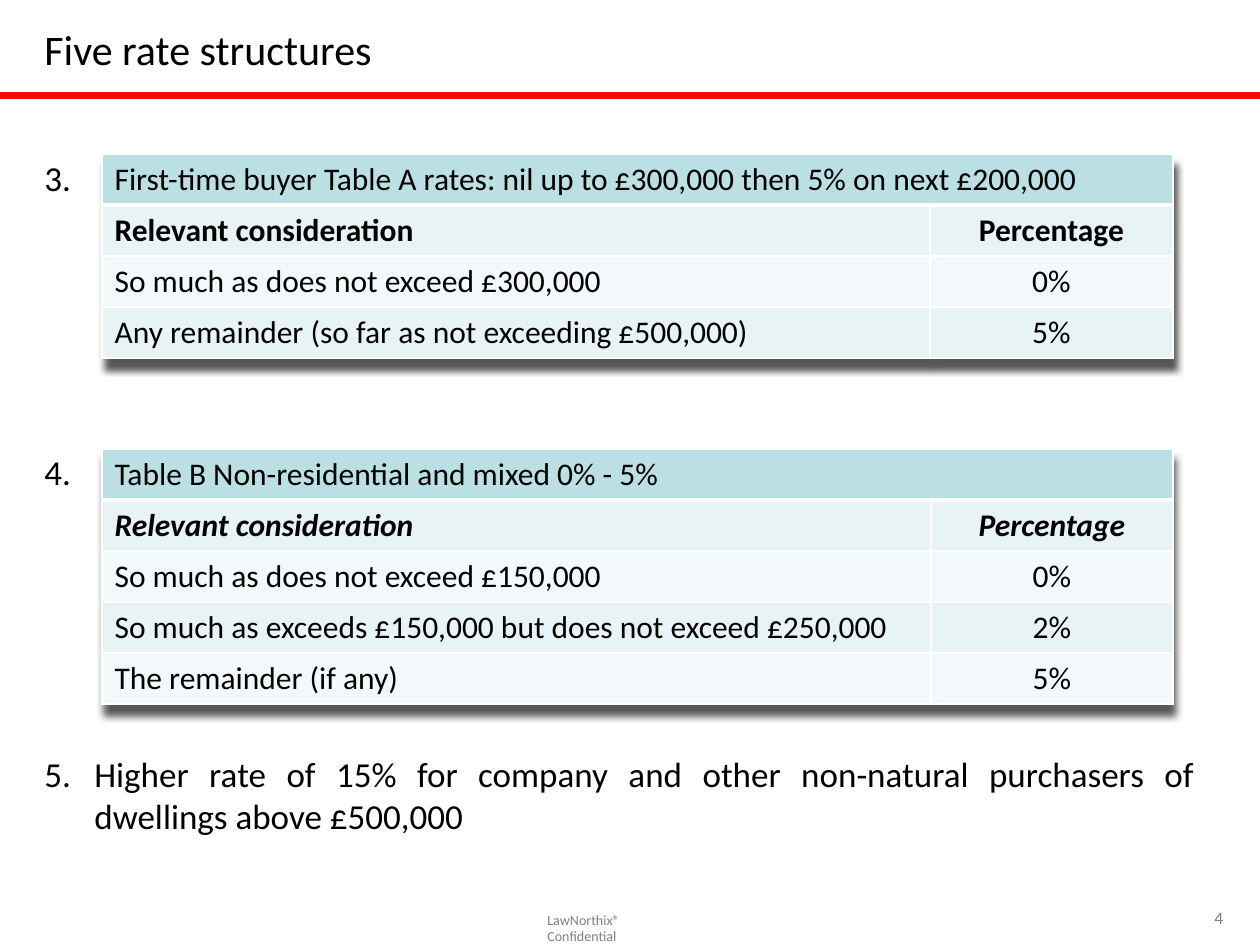
from lxml import etree
from pptx import Presentation
from pptx.dml.color import RGBColor
from pptx.enum.shapes import MSO_SHAPE
from pptx.enum.text import MSO_ANCHOR, PP_ALIGN
from pptx.oxml.ns import qn
from pptx.util import Emu, Pt

RECT = MSO_SHAPE.RECTANGLE
TOP, MIDDLE = MSO_ANCHOR.TOP, MSO_ANCHOR.MIDDLE
LEFT, CENTER, JUSTIFY = PP_ALIGN.LEFT, PP_ALIGN.CENTER, PP_ALIGN.JUSTIFY

FONT = "Calibri"
BLACK, GRAY, RED, WHITE = "000000", "7F7F7F", "FF0000", "FFFFFF"
HEADER_FILL = "BBE0E3"
BAND_FILLS = ("E7F3F4", "F3F9FA")
ROW_HEIGHT = 51
TABLE_LEFT = 102

FIRST_TIME_ROWS = [
    ("First-time buyer Table A rates: nil up to £300,000 then 5% on next £200,000", ""),
    ("Relevant consideration", "Percentage"),
    ("So much as does not exceed £300,000", "0%"),
    ("Any remainder (so far as not exceeding £500,000)", "5%"),
]
NON_RESIDENTIAL_ROWS = [
    ("Table B Non-residential and mixed 0% - 5%", ""),
    ("Relevant consideration", "Percentage"),
    ("So much as does not exceed £150,000", "0%"),
    ("So much as exceeds £150,000 but does not exceed £250,000", "2%"),
    ("The remainder (if any)", "5%"),
]
ITEMS = [
    ("3.", 0, LEFT),
    ("4.", 144, LEFT),
    ("5.\tHigher rate of 15% for company and other non-natural purchasers of "
     "dwellings above £500,000", 149, JUSTIFY),
]


def px(n):
    return Emu(round(n * 914400 / 126))


def rgb(color):
    return RGBColor.from_string(color)


def style_paragraph(p, size, color=BLACK, align=LEFT):
    p.font.name = FONT
    p.font.size = Pt(size)
    p.font.color.rgb = rgb(color)
    p.alignment = align


def add_text_frame(slide, x, y, w, h, anchor=TOP, wrap=True):
    tf = slide.shapes.add_textbox(px(x), px(y), px(w), px(h)).text_frame
    tf.word_wrap = wrap
    tf.vertical_anchor = anchor
    return tf


def add_label(slide, box, text, size, color=BLACK, anchor=TOP, wrap=False):
    tf = add_text_frame(slide, *box, anchor=anchor, wrap=wrap)
    p = tf.paragraphs[0]
    p.text = text
    style_paragraph(p, size, color)
    return p


def add_rule(slide, x, y, w, h):
    sp = slide.shapes.add_shape(RECT, px(x), px(y), px(w), px(h))
    sp.shadow.inherit = False
    sp.fill.solid()
    sp.fill.fore_color.rgb = rgb(RED)
    sp.line.fill.background()


def add_items(slide, x, y, w, h):
    tf = add_text_frame(slide, x, y, w, h)
    for i, (text, gap, align) in enumerate(ITEMS):
        p = tf.add_paragraph() if i else tf.paragraphs[0]
        p.text = text
        p.space_before = Pt(gap)
        style_paragraph(p, 20, align=align)
        pPr = p._p.get_or_add_pPr()
        pPr.set("marL", str(px(50)))
        pPr.set("indent", str(-px(50)))


def set_borders(cell, top, bottom):
    tcPr = cell._tc.get_or_add_tcPr()
    for side, width in (("L", 1), ("R", 1), ("T", top), ("B", bottom)):
        ln = etree.SubElement(tcPr, qn(f"a:ln{side}"), w=str(Pt(width)))
        fill = etree.SubElement(ln, qn("a:solidFill"))
        etree.SubElement(fill, qn("a:srgbClr"), val=WHITE)


def add_table_shadow(table):
    effects = etree.SubElement(table._tbl.tblPr, qn("a:effectLst"))
    table._tbl.tblPr.insert(0, effects)
    shadow = etree.SubElement(effects, qn("a:outerShdw"), blurRad="50800",
                              dist="76200", dir="4800000", algn="tl", rotWithShape="0")
    color = etree.SubElement(shadow, qn("a:srgbClr"), val=BLACK)
    etree.SubElement(color, qn("a:alpha"), val="65000")


def add_rate_table(slide, y, widths, rows, italic=False):
    frame = slide.shapes.add_table(len(rows), 2, px(TABLE_LEFT), px(y),
                                   px(sum(widths)), px(ROW_HEIGHT * len(rows)))
    table = frame.table
    table.first_row = table.horz_banding = False
    for column, width in zip(table.columns, widths):
        column.width = px(width)
    for i, row in enumerate(rows):
        table.rows[i].height = px(ROW_HEIGHT)
        for j, text in enumerate(row):
            cell = table.cell(i, j)
            set_borders(cell, 3 if i == 1 else 1, 3 if i == 0 else 1)
            cell.fill.solid()
            cell.fill.fore_color.rgb = rgb(BAND_FILLS[(i - 1) % 2] if i else HEADER_FILL)
            p = cell.text_frame.paragraphs[0]
            p.text = text
            style_paragraph(p, 18, align=CENTER if j else LEFT)
            p.font.bold = i == 1
            p.font.italic = italic and i == 1
    table.cell(0, 0).merge(table.cell(0, 1))
    add_table_shadow(table)


def main():
    prs = Presentation()
    prs.slide_width, prs.slide_height = px(1260), px(945)
    slide = prs.slides.add_slide(prs.slide_layouts[6])
    add_label(slide, (535, 905, 165, 30), "LawNorthix® Confidential", 8, GRAY)
    add_label(slide, (1202, 901, 48, 36), "4", 10, GRAY)
    add_rule(slide, 0, 92, 1260, 7)
    title = add_label(slide, (32, 10, 1197, 84), "Five rate structures", 24,
                      anchor=MIDDLE, wrap=True)
    title.line_spacing = 0.9
    add_items(slide, 32, 150, 1175, 756)
    add_rate_table(slide, 154, (828, 243), FIRST_TIME_ROWS)
    add_rate_table(slide, 449, (829, 242), NON_RESIDENTIAL_ROWS, italic=True)
    prs.save("out.pptx")


if __name__ == "__main__":
    main()
